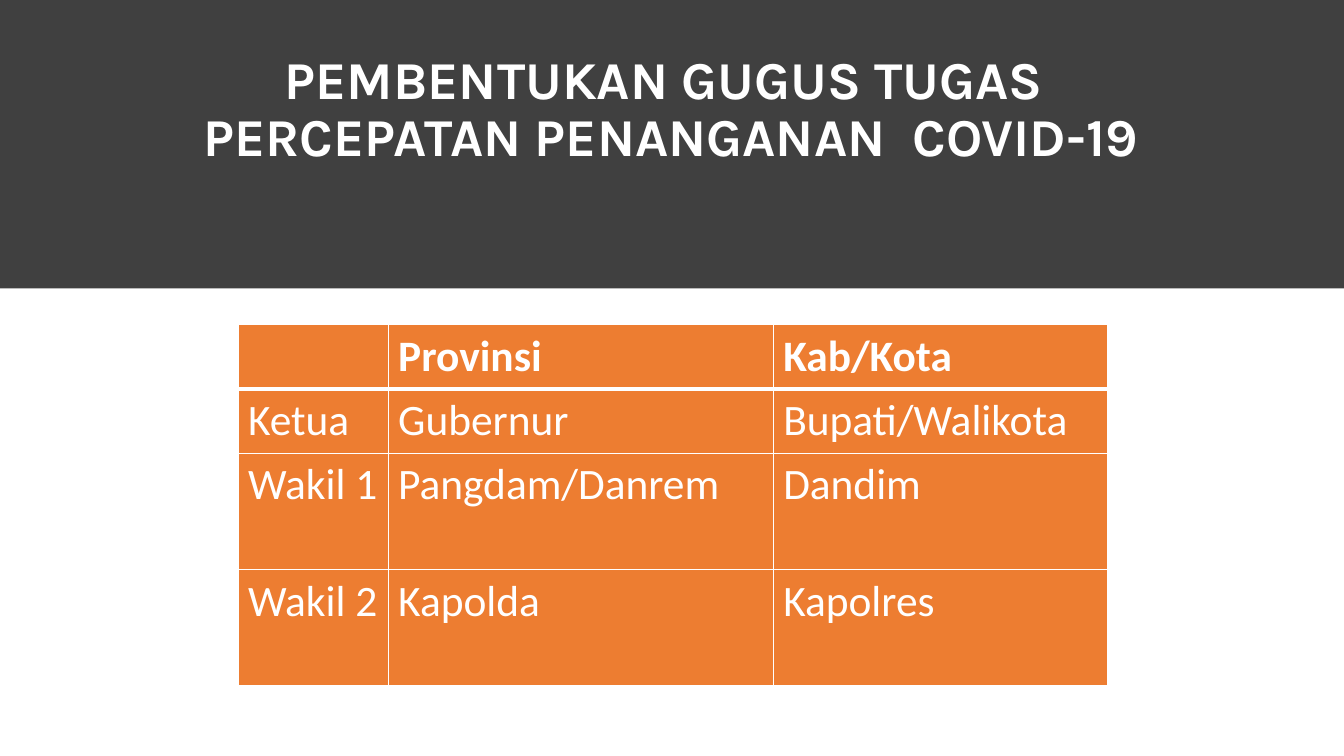
from copy import deepcopy
from dataclasses import dataclass

from lxml.etree import SubElement
from pptx import Presentation
from pptx.dml.color import RGBColor
from pptx.enum.shapes import MSO_SHAPE as Shape
from pptx.enum.text import MSO_ANCHOR as Anchor, MSO_AUTO_SIZE as Fit, PP_ALIGN as Align
from pptx.oxml.ns import qn
from pptx.util import Pt

WHITE = RGBColor(0xFF, 0xFF, 0xFF)
DARK = RGBColor(0x40, 0x40, 0x40)
ORANGE = RGBColor(0xED, 0x7D, 0x31)

WIDTH, HEIGHT = 960, 540
COLS = (107.28, 275.04, 239.04)
TITLE = "PEMBENTUKAN GUGUS TUGAS \nPERCEPATAN PENANGANAN  COVID-19"


@dataclass(frozen=True)
class Row:
    cells: tuple[str, str, str]
    height: float
    bold: bool = False
    top: float = 1
    base: float = 1


ROWS = (
    Row(("", "Provinsi", "Kab/Kota"), 46, bold=True, base=3),
    Row(("Ketua", "Gubernur", "Bupati/Walikota"), 46, top=3),
    Row(("Wakil 1", "Pangdam/Danrem", "Dandim"), 83),
    Row(("Wakil 2", "Kapolda", "Kapolres"), 83),
)


def write(frame, text: str, *, size: float, font: str, bold: bool = False,
          color: RGBColor = WHITE, align: Align = Align.LEFT,
          spacing: float = 1.0) -> None:
    """Fill a frame with one paragraph; newlines become line breaks."""
    para = frame.paragraphs[0]
    para.alignment = align
    para.line_spacing = spacing
    for index, line in enumerate(text.split("\n")):
        if index:
            para.add_line_break()
        run = para.add_run()
        run.text = line
        run.font.size = Pt(size)
        run.font.name = font
        run.font.bold = bold
        run.font.color.rgb = color
    # Line breaks need the run format too, or they take the theme's size.
    for gap in frame._element.iter(qn("a:br")):
        gap.append(deepcopy(run.font._element))


def edge(cell, side: str, width: float) -> None:
    """Draw one white border of a cell."""
    props = cell._tc.get_or_add_tcPr()
    line = SubElement(props, qn(f"a:ln{side}"), w=str(Pt(width)))
    fill = SubElement(line, qn("a:solidFill"))
    SubElement(fill, qn("a:srgbClr"), val=str(WHITE))


def add_title(slide) -> None:
    title = slide.shapes.title
    title.left, title.top = Pt(55.5), Pt(28.8)
    title.width, title.height = Pt(847.5), Pt(95)
    frame = title.text_frame
    frame.auto_size = Fit.NONE
    frame.word_wrap = True
    frame.vertical_anchor = Anchor.BOTTOM
    write(frame, TITLE, size=38, font="Karla", bold=True,
          align=Align.CENTER, spacing=0.9)


def add_band(slide) -> None:
    """Put the dark band behind the title."""
    band = slide.shapes.add_shape(Shape.RECTANGLE, 0, 0, Pt(WIDTH), Pt(206))
    band.shadow.inherit = False
    band.fill.solid()
    band.fill.fore_color.rgb = DARK
    band.line.fill.background()
    slide.shapes.title.element.addprevious(band.element)


def add_grid(slide) -> None:
    total = sum(row.height for row in ROWS)
    grid = slide.shapes.add_table(len(ROWS), len(COLS), Pt(170), Pt(232),
                                  Pt(sum(COLS)), Pt(total)).table
    for col, width in zip(grid.columns, COLS):
        col.width = Pt(width)
    for line, row in zip(grid.rows, ROWS):
        line.height = Pt(row.height)
        for cell, text in zip(line.cells, row.cells):
            for side, width in zip("LRTB", (1, 1, row.top, row.base)):
                edge(cell, side, width)
            cell.fill.solid()
            cell.fill.fore_color.rgb = ORANGE
            if text:
                write(cell.text_frame, text, size=31, font="Calibri", bold=row.bold)


def main() -> None:
    deck = Presentation()
    deck.slide_width, deck.slide_height = Pt(WIDTH), Pt(HEIGHT)
    slide = deck.slides.add_slide(deck.slide_layouts.get_by_name("Title Only"))
    add_title(slide)
    add_band(slide)
    add_grid(slide)
    deck.save("out.pptx")


if __name__ == "__main__":
    main()
